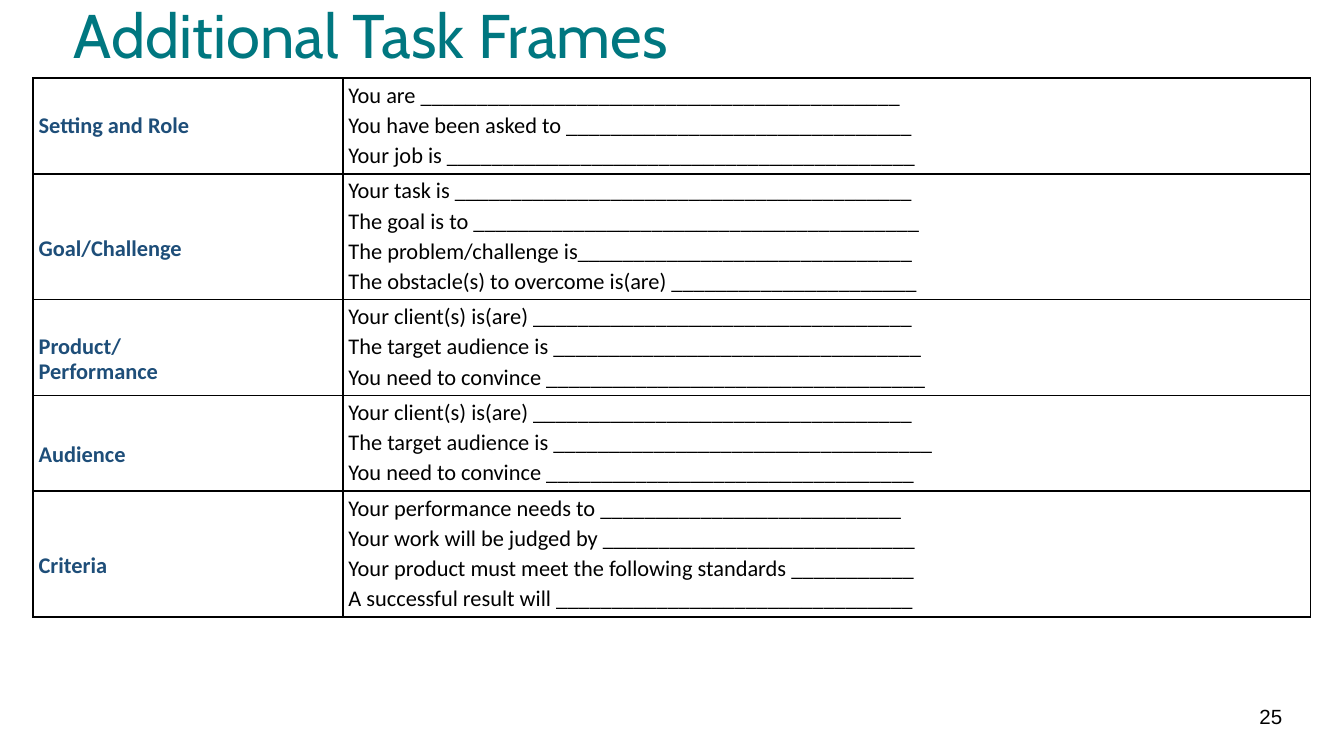
from dataclasses import dataclass

from lxml import etree
from pptx import Presentation
from pptx.dml.color import RGBColor
from pptx.enum import text
from pptx.oxml import ns
from pptx.util import Pt

MARGINS = dict(margin_left=Pt(2.9), margin_right=Pt(2.9),
               margin_top=Pt(2.9), margin_bottom=Pt(2.9))
BOX_MARGINS = dict(margin_left=Pt(5), margin_right=Pt(5),
                   margin_top=Pt(2.9), margin_bottom=Pt(2.9))
MIDDLE = text.MSO_ANCHOR.MIDDLE
COLUMN_WIDTHS = (166, 518.2)
LABEL_DROP = 16


@dataclass
class TextStyle:
    font: str
    size: float
    color: str
    bold: bool = False
    line_spacing: float = 0.9
    gap: float = 0
    align: text.PP_ALIGN = text.PP_ALIGN.LEFT


@dataclass
class Frame:
    label: list[str]
    prompts: list[str]
    height: float
    label_top: float = LABEL_DROP


TITLE = TextStyle("Cabin", 33, "007780")
LABEL = TextStyle("Calibri", 12, "1E4E79", bold=True)
PROMPT = TextStyle("Calibri", 12, "000000", gap=3)
NUMBER = TextStyle("Arial", 11, "000000", line_spacing=1,
                   align=text.PP_ALIGN.RIGHT)

FRAMES = [
    Frame(["Setting and Role"], [
        "You are ___________________________________________",
        "You have been asked to _______________________________",
        "Your job is __________________________________________",
    ], 51.2, label_top=2.9),
    Frame(["Goal/Challenge"], [
        "Your task is _________________________________________",
        "The goal is to ________________________________________",
        "The problem/challenge is______________________________",
        "The obstacle(s) to overcome is(are) ______________________",
    ], 67.2),
    Frame(["Product/", "Performance"], [
        "Your client(s) is(are) __________________________________",
        "The target audience is _________________________________",
        "You need to convince __________________________________",
    ], 51.2),
    Frame(["Audience"], [
        "Your client(s) is(are) __________________________________",
        "The target audience is __________________________________",
        "You need to convince _________________________________",
    ], 51.2),
    Frame(["Criteria"], [
        "Your performance needs to ___________________________",
        "Your work will be judged by ____________________________",
        "Your product must meet the following standards ___________",
        "A successful result will ________________________________",
    ], 67.2),
]


def set_all(target, values: dict) -> None:
    for name, value in values.items():
        setattr(target, name, value)


def color(hex_value: str) -> RGBColor:
    return RGBColor.from_string(hex_value)


def write(frame, lines: list[str], style: TextStyle) -> None:
    for index, line in enumerate(lines):
        para = frame.add_paragraph() if index else frame.paragraphs[0]
        set_all(para, dict(alignment=style.align, line_spacing=style.line_spacing,
                           space_before=Pt(style.gap if index else 0)))
        span = para.add_run()
        span.text = line
        set_all(span.font, dict(name=style.font, size=Pt(style.size), bold=style.bold))
        span.font.color.rgb = color(style.color)


def add_text(page, left: float, top: float, width: float, height: float,
             line: str, style: TextStyle) -> None:
    box = page.shapes.add_textbox(Pt(left), Pt(top), Pt(width), Pt(height))
    set_all(box.text_frame, dict(BOX_MARGINS, word_wrap=True, vertical_anchor=MIDDLE))
    write(box.text_frame, [line], style)


def add_borders(cell, hex_value: str, width: float) -> None:
    properties = cell._tc.get_or_add_tcPr()
    for side in ("lnL", "lnR", "lnT", "lnB"):
        line = etree.SubElement(properties, ns.qn(f"a:{side}"), w=str(Pt(width)))
        fill = etree.SubElement(line, ns.qn("a:solidFill"))
        etree.SubElement(fill, ns.qn("a:srgbClr"), val=hex_value)


def fill_cell(cell, lines: list[str], style: TextStyle, top: float = 2.9) -> None:
    set_all(cell, dict(MARGINS, margin_top=Pt(top), vertical_anchor=MIDDLE))
    add_borders(cell, "000000", 1)
    cell.fill.background()
    write(cell.text_frame, lines, style)


def add_frames(page, left: float, top: float, frames: list[Frame]) -> None:
    total = sum(frame.height for frame in frames)
    table = page.shapes.add_table(len(frames), len(COLUMN_WIDTHS), Pt(left), Pt(top),
                                  Pt(sum(COLUMN_WIDTHS)), Pt(total)).table
    set_all(table, dict(first_row=False, horz_banding=False))
    for column, width in zip(table.columns, COLUMN_WIDTHS):
        column.width = Pt(width)
    for row, frame in zip(table.rows, frames):
        row.height = Pt(frame.height)
        fill_cell(row.cells[0], frame.label, LABEL, frame.label_top)
        fill_cell(row.cells[1], frame.prompts, PROMPT)


def main() -> None:
    deck = Presentation()
    set_all(deck, dict(slide_width=Pt(720), slide_height=Pt(405)))
    page = deck.slides.add_slide(deck.slide_layouts[6])
    add_frames(page, 17.8, 41.8, FRAMES)
    add_text(page, 34.6, 0, 507.6, 41.8, "Additional Task Frames", TITLE)
    add_text(page, 651.6, 373, 40.3, 21.6, "25", NUMBER)
    deck.save("out.pptx")


if __name__ == "__main__":
    main()
